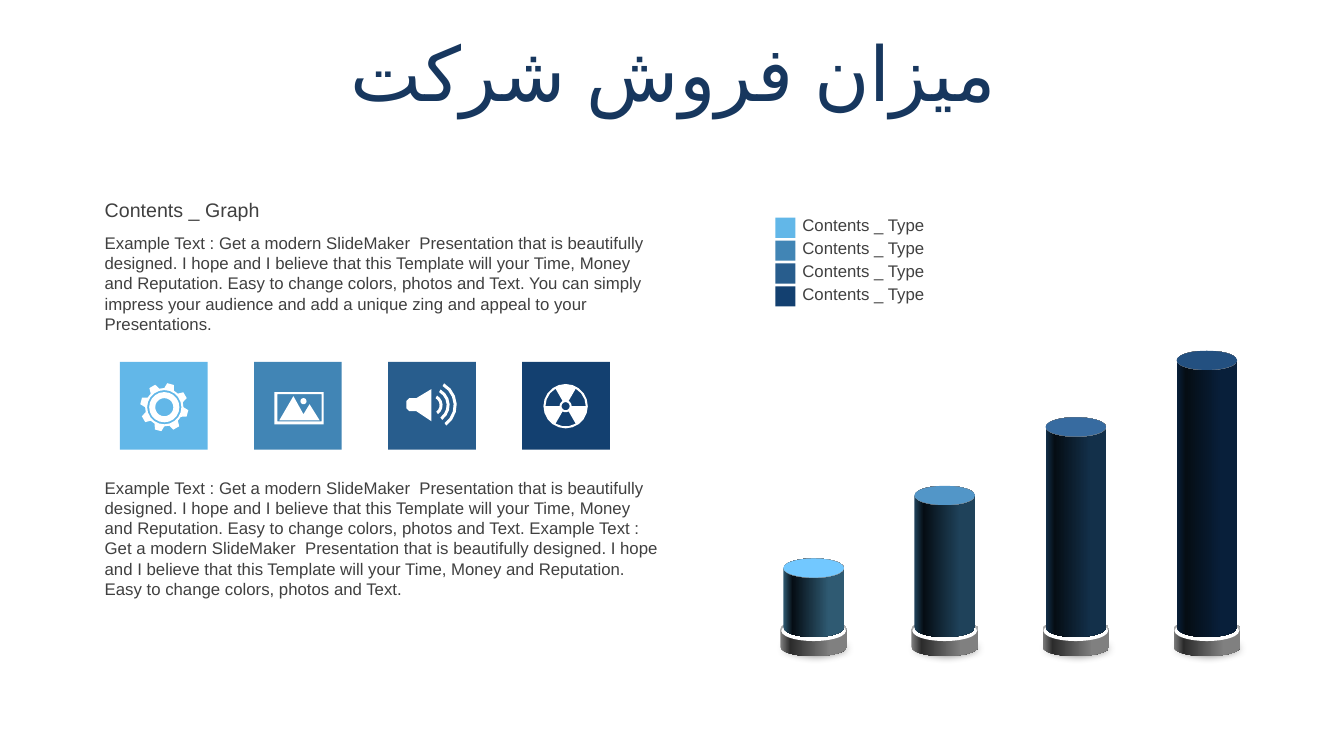
"""Build the company sales slide with text, icon tiles, a legend and cylinder bars."""
import copy
import math

import pptx
import pptx.dml.color
import pptx.enum.shapes
import pptx.enum.text
import pptx.oxml
import pptx.oxml.ns
import pptx.util

Inches = pptx.util.Inches
SHAPES = pptx.enum.shapes.MSO_SHAPE
ANCHORS = pptx.enum.text.MSO_ANCHOR
ALIGNMENTS = pptx.enum.text.PP_ALIGN

PALETTE = ["62B7E8", "4185B5", "285D8D", "134070"]
INTRODUCTION = (
    "Example Text : Get a modern SlideMaker  Presentation that is beautifully designed. "
    "I hope and I believe that this Template will your Time, Money and Reputation. "
    "Easy to change colors, photos and Text."
)
APPEAL = (
    " You can simply impress your audience and add a unique zing and appeal "
    "to your Presentations."
)
BARS = [
    (5.54, "72C8FF", "2F5A72"),
    (4.82, "5296C8", "1F425A"),
    (4.14, "376BA0", "13304A"),
    (3.48, "235080", "081F3A"),
]
NAMESPACE = pptx.oxml.ns.nsdecls("a")


def color(value):
    return pptx.dml.color.RGBColor.from_string(value)


def arc(x, y, radius, start=0, end=360):
    steps = max(3, round(abs(end - start) / 18))
    angles = [math.radians(start + (end - start) * i / steps) for i in range(steps + 1)]
    return [(x + radius * math.cos(a), y + radius * math.sin(a)) for a in angles]


def band(x, y, inner, outer, start, end):
    return arc(x, y, outer, start, end) + arc(x, y, inner, end, start)


def box(left, top, right, bottom):
    return [(left, top), (right, top), (right, bottom), (left, bottom)]


def gear_outlines(x=1.63, y=4.04, teeth=8):
    rim = []
    for tooth in range(teeth):
        middle = -75 + tooth * 360 / teeth
        for offset, radius in [(-15, 0.19), (-8, 0.24), (8, 0.24), (15, 0.19)]:
            rim += arc(x, y, radius, middle + offset, middle + offset)[:1]
    return [rim] + [arc(x, y, radius) for radius in (0.17, 0.15, 0.09)]


def photo_outlines():
    mountains = [(2.77, 4.17), (2.91, 3.93), (3.01, 4.11), (3.07, 4.01), (3.17, 4.17)]
    return [box(2.72, 3.89, 3.21, 4.21), box(2.75, 3.91, 3.19, 4.18),
            mountains, arc(3.01, 3.98, 0.03)]


def speaker_outlines(x=4.28, y=4.02):
    horn = [(x, 3.86), (x, 4.18), (4.13, 4.08), (4.06, 4.08), (4.03, 4.05),
            (4.03, 3.98), (4.06, 3.95), (4.13, 3.95)]
    return [horn] + [band(x, y, r - 0.03, r, -60, 54) for r in (0.11, 0.18, 0.25)]


def radiation_outlines(x=5.61, y=4.03):
    blades = [band(x, y, 0.06, 0.2, start, start + 60) for start in (-180, -60, 60)]
    return [arc(x, y, 0.22), arc(x, y, 0.04)] + blades


class SlideBuilder:
    font = "Arial"
    text_color = "404040"

    def __init__(self, presentation):
        self.slide = presentation.slides.add_slide(presentation.slide_layouts[6])

    def text(self, words, left, top, width, height, size=12, anchor=ANCHORS.TOP):
        shape = self.slide.shapes.add_textbox(*map(Inches, (left, top, width, height)))
        frame = shape.text_frame
        frame.word_wrap = True
        frame.vertical_anchor = anchor
        frame.text = words
        paragraph = frame.paragraphs[0]
        font = paragraph.runs[0].font
        font.name = self.font
        font.size = pptx.util.Pt(size)
        font.color.rgb = color(self.text_color)
        return paragraph

    def title(self, words):
        paragraph = self.text(words, 0.35, 0.37, 12.66, 0.79, 54, ANCHORS.MIDDLE)
        paragraph.alignment = ALIGNMENTS.CENTER
        paragraph.line_spacing = 0.9
        paragraph.space_before = pptx.util.Pt(10)
        run = paragraph.runs[0]
        run.font.color.rgb = color("17375E")
        properties = run._r.get_or_add_rPr()
        properties.set("lang", "fa-IR")
        properties.append(pptx.oxml.parse_xml(
            '<a:cs %s typeface="%s"/>' % (NAMESPACE, self.font)))

    def solid(self, kind, left, top, width, height, fill):
        shape = self.slide.shapes.add_shape(kind, *map(Inches, (left, top, width, height)))
        shape.shadow.inherit = False
        shape.fill.solid()
        shape.fill.fore_color.rgb = color(fill)
        shape.line.fill.background()
        return shape

    def cylinder(self, left, top, width, height, rim, dark, light):
        shape = self.solid(SHAPES.CAN, left, top, width, height, light)
        shape.adjustments[0] = rim
        shape.fill.gradient()
        shape.fill.gradient_angle = 0
        stop_list = shape._element.spPr.find(".//" + pptx.oxml.ns.qn("a:gsLst"))
        stop_list.append(copy.deepcopy(stop_list[-1]))
        stops = zip(shape.fill.gradient_stops, (0, 0.15, 0.75), (light, dark, light))
        for stop, position, value in stops:
            stop.position = position
            stop.color.rgb = color(value)

    def soft_shadow(self, left, top, width, height):
        shape = self.solid(SHAPES.OVAL, left, top, width, height, "808080")
        effects = shape._element.spPr.find(pptx.oxml.ns.qn("a:effectLst"))
        effects.append(pptx.oxml.parse_xml(
            '<a:softEdge %s rad="%d"/>' % (NAMESPACE, Inches(0.08))))

    def bar(self, left, top, cap, side):
        self.soft_shadow(left - 0.15, 6.28, 0.93, 0.31)
        self.cylinder(left - 0.03, 6.15, 0.66, 0.36, 0.5, "2B2B2B", "808080")
        self.solid(SHAPES.OVAL, left - 0.02, 6.16, 0.64, 0.2, "FFFFFF")
        self.cylinder(left, top, 0.6, 6.32 - top, 0.32, "050D14", side)
        self.solid(SHAPES.OVAL, left, top, 0.6, 0.19, cap)

    def icon(self, outlines):
        contours = [[(Inches(x), Inches(y)) for x, y in outline] for outline in outlines]
        builder = self.slide.shapes.build_freeform(*contours[0][0])
        builder.add_line_segments(contours[0][1:], close=True)
        for contour in contours[1:]:
            builder.move_to(*contour[0])
            builder.add_line_segments(contour[1:], close=True)
        shape = builder.convert_to_shape()
        shape.shadow.inherit = False
        shape.fill.solid()
        shape.fill.fore_color.rgb = color("FFFFFF")
        shape.line.fill.background()


def main():
    presentation = pptx.Presentation()
    presentation.slide_width = Inches(13.33)
    presentation.slide_height = Inches(7.5)
    builder = SlideBuilder(presentation)

    builder.title("میزان فروش شرکت")
    builder.text("Contents _ Graph", 0.94, 1.91, 5.73, 0.34, 14)
    builder.text(INTRODUCTION + APPEAL, 0.94, 2.26, 5.73, 1.11)
    builder.text(INTRODUCTION + " " + INTRODUCTION, 0.94, 4.69, 5.73, 1.31)

    icons = [gear_outlines(), photo_outlines(), speaker_outlines(), radiation_outlines()]
    for index, (fill, outlines) in enumerate(zip(PALETTE, icons)):
        builder.solid(SHAPES.RECTANGLE, 1.19 + 1.33 * index, 3.59, 0.87, 0.87, fill)
        builder.icon(outlines)
        legend_top = 2.16 + 0.227 * index
        builder.solid(SHAPES.RECTANGLE, 7.69, legend_top, 0.2, 0.2, fill)
        builder.text("Contents _ Type", 7.86, legend_top - 0.08, 1.43, 0.3,
                     anchor=ANCHORS.MIDDLE)

    for index, (top, cap, side) in enumerate(BARS):
        builder.bar(7.77 + 1.3 * index, top, cap, side)

    presentation.save("out.pptx")


if __name__ == "__main__":
    main()
